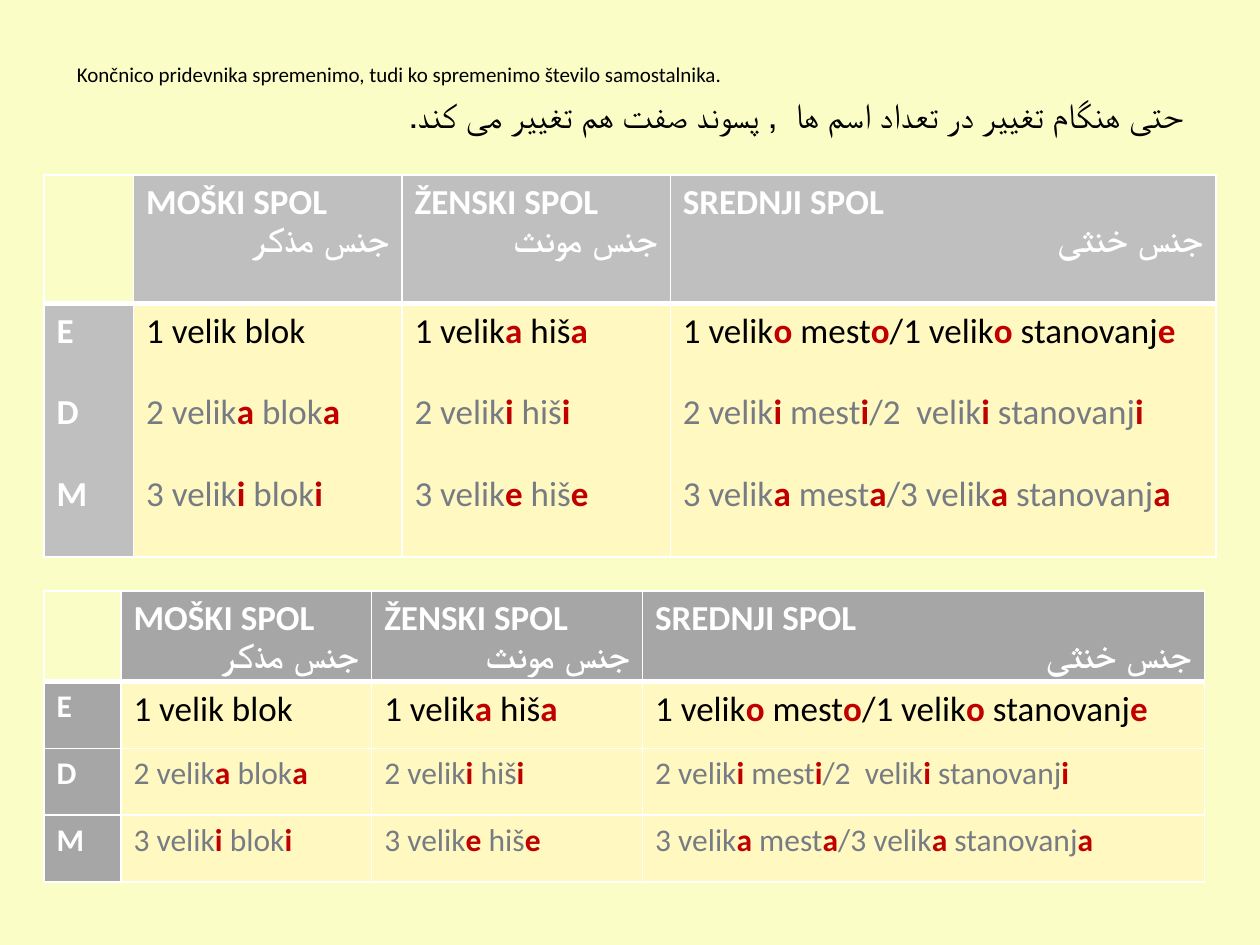
from dataclasses import dataclass
from pptx import Presentation
from pptx.dml.color import RGBColor as Rgb
from pptx.enum.text import MSO_AUTO_SIZE as Fit, PP_ALIGN as Align
from pptx.oxml import parse_xml
from pptx.util import Pt

NS = "http://schemas.openxmlformats.org/drawingml/2006/main"
SCALE = 9144


@dataclass(frozen=True)
class Theme:
    """Hold the colours, font and type sizes."""
    back: str = "FAFEC6"
    cell: str = "FFF8C1"
    light: str = "BFBFBF"
    dark: str = "A6A6A6"
    white: str = "FFFFFF"
    ink: str = "000000"
    dim: str = "777C84"
    red: str = "C00000"
    font: str = "Calibri"
    note: int = 12
    small: int = 18
    big: int = 20
    thin: float = 0.96
    thick: float = 3


T = Theme()
INTRO = [
    ("Končnico pridevnika spremenimo, tudi ko spremenimo število samostalnika.", T.note, 2.4, False),
    ("حتی هنگام تغییر در تعداد اسم ها  , پسوند صفت هم تغییر می کند.", T.big, 4, True),
]
HEADS = [("MOŠKI SPOL", "جنس مذکر"), ("ŽENSKI SPOL", "جنس مونث"), ("SREDNJI SPOL", "جنس خنثی")]
FORMS = [
    ("E", "1 velik blok", "1 velik*a* hiš*a*", "1 velik*o* mest*o*/1 velik*o* stanovanj*e*"),
    ("D", "2 velik*a* blok*a*", "2 velik*i* hiš*i*", "2 velik*i *mest*i*/2  velik*i* stanovanj*i*"),
    ("M", "3 velik*i* blok*i*", "3 velik*e* hiš*e*", "3 velik*a* mest*a*/3 velik*a* stanovanj*a*"),
]


def px(*nums):
    """Turn px into EMU."""
    return [n * SCALE for n in nums]


def put(obj, fmt):
    """Set each format value on an object."""
    for key, val in fmt.items():
        setattr(obj, key, val)


def paint(fill, tint):
    """Fill with one colour, or with none."""
    if tint:
        fill.solid()
        fill.fore_color.rgb = Rgb.from_string(tint)
    else:
        fill.background()


def write(para, text, size, tint, bold=False):
    """Add runs, with the parts between stars in bold red."""
    for i, part in enumerate(text.split("*")):
        if part:
            run = para.add_run()
            run.text = part
            put(run.font, {"name": T.font, "size": Pt(size), "bold": bold or i % 2 == 1})
            run.font.color.rgb = Rgb.from_string(T.red if i % 2 else tint)


def flip(para):
    """Make a paragraph run from right to left."""
    para.alignment = Align.RIGHT
    para._p.get_or_add_pPr().set("rtl", "1")


def lines(frame, count):
    """Give the frame a number of paragraphs."""
    while len(frame.paragraphs) < count:
        frame.add_paragraph()
    return frame.paragraphs


def edge(cell, top, base):
    """Draw the four white borders of a cell."""
    props = cell._tc.get_or_add_tcPr()
    for i, (side, width) in enumerate(zip("LRTB", (T.thin, T.thin, top, base))):
        props.insert(i, parse_xml(
            f'<a:ln{side} xmlns:a="{NS}" w="{Pt(width)}"><a:solidFill>'
            f'<a:srgbClr val="{T.white}"/></a:solidFill></a:ln{side}>'))


def intro(slide, box):
    """Place the two sentences in the body placeholder."""
    title, body = slide.placeholders
    title.element.getparent().remove(title.element)
    put(body, dict(zip(("left", "top", "width", "height"), px(*box))))
    frame = body.text_frame
    frame.auto_size = Fit.NONE
    for para, (text, size, gap, rtl) in zip(lines(frame, len(INTRO)), INTRO):
        write(para, text, size, T.ink)
        para.space_before = Pt(gap)
        props = para._p.get_or_add_pPr()
        put_in = {"marL": 38, "indent": -37}
        for key, val in put_in.items():
            props.set(key, str(val * SCALE))
        props.append(parse_xml(f'<a:buNone xmlns:a="{NS}"/>'))
        if rtl:
            flip(para)


def chart(slide, box, cols, rows, groups, look):
    """Place a gender table with one body row for each group of forms."""
    grid = slide.shapes.add_table(len(rows), len(cols), *px(*box)).table
    put(grid, {"first_row": False, "horz_banding": False})
    for col, wide in zip(grid.columns, px(*cols)):
        col.width = wide
    for row, high in zip(grid.rows, px(*rows)):
        row.height = high
    for r in range(len(rows)):
        for c in range(len(cols)):
            cell = grid.cell(r, c)
            if r == 0:
                paint(cell.fill, look["head"] if c else look["corner"])
            else:
                paint(cell.fill, T.cell if c else look["head"])
            edge(cell, T.thick if r == 1 else T.thin, T.thick if r == 0 else T.thin)
    for c, pair in enumerate(HEADS, 1):
        paras = lines(grid.cell(0, c).text_frame, 2)
        for para, text in zip(paras, pair):
            write(para, text, T.big, T.white, True)
        flip(paras[1])
    for r, group in enumerate(groups, 1):
        for c in range(len(cols)):
            paras = lines(grid.cell(r, c).text_frame, len(group))
            for i, (para, form) in enumerate(zip(paras, group)):
                first = form is FORMS[0]
                tint = T.ink if first else T.dim
                size = T.big if first and c else look["size"]
                write(para, form[c], size, tint if c else T.white, c == 0)
                if i:
                    para.space_before = Pt(look["gap"])


def main():
    """Build and save the slide."""
    deck = Presentation()
    put(deck, dict(zip(("slide_width", "slide_height"), px(1000, 750))))
    slide = deck.slides.add_slide(deck.slide_layouts[1])
    paint(slide.background.fill, T.back)
    intro(slide, (50, 44, 900, 626))
    chart(slide, (35, 139, 930, 303), (71, 213, 213, 433), (102, 201), [FORMS],
          {"head": T.light, "corner": None, "size": T.big, "gap": 22})
    chart(slide, (35, 469, 921, 228), (61, 199, 215, 446), (69, 53, 53, 53),
          [[form] for form in FORMS],
          {"head": T.dark, "corner": T.back, "size": T.small, "gap": 0})
    deck.save("out.pptx")


if __name__ == "__main__":
    main()
